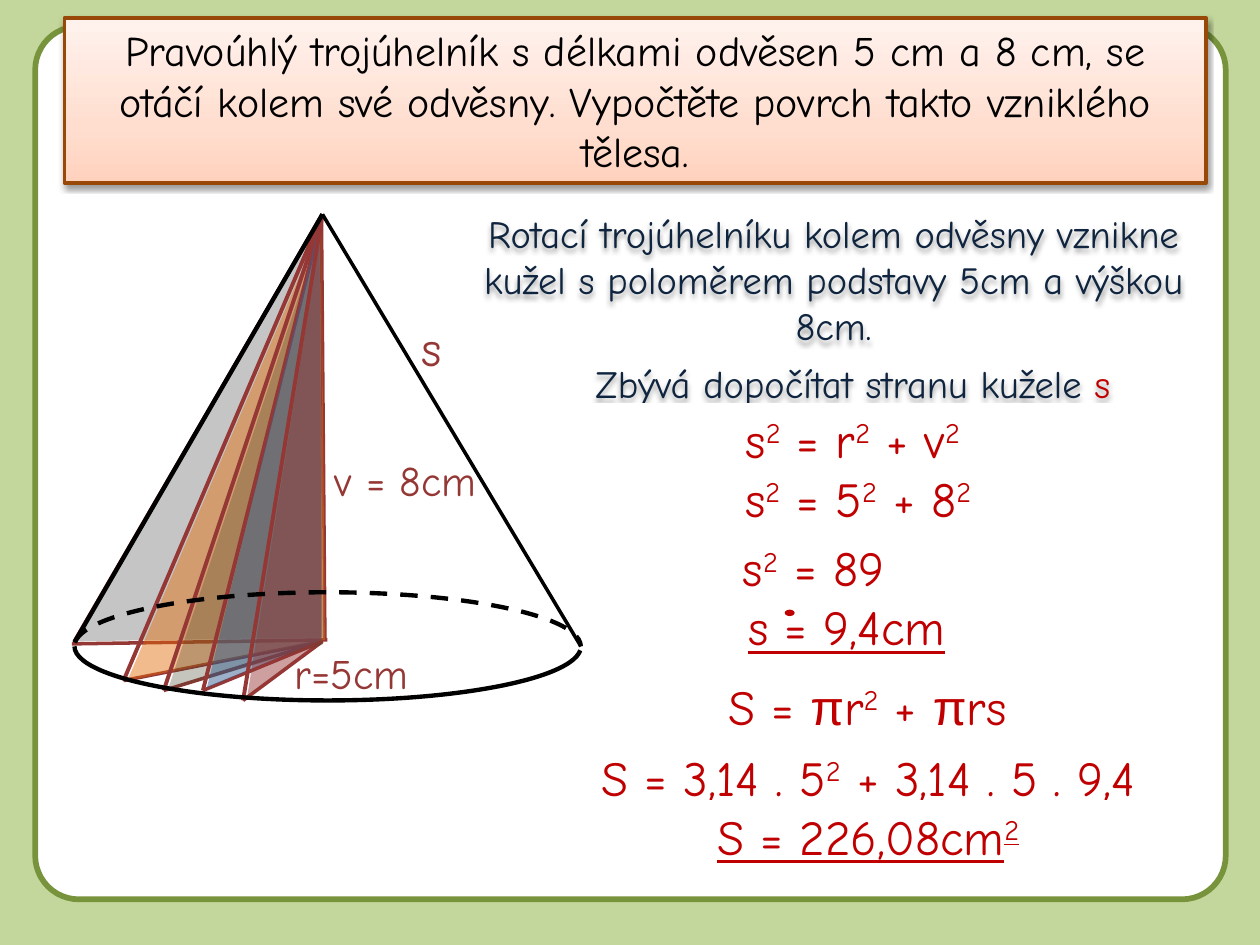
import itertools

import pptx
import pptx.dml.color
import pptx.enum.dml
import pptx.enum.shapes
import pptx.enum.text
import pptx.oxml
import pptx.oxml.ns
import pptx.util

Cm = pptx.util.Cm
Pt = pptx.util.Pt
RGB = pptx.dml.color.RGBColor.from_string
SHAPE = pptx.enum.shapes.MSO_SHAPE
ALIGN = pptx.enum.text.PP_ALIGN

THEME = {
    "font": "Comic Neue", "symbols": "Arial",
    "page": "C3D69B", "panel": "FFFFFF", "frame": "77933C",
    "ink": "000000", "note": "0F243E", "result": "C00000", "triangle": "953735",
    "title_line": "984807",
    "title_stops": [(0, "FFD2BD"), (35, "FFDED0"), (100, "FFF2ED")],
    "title_size": 24, "note_size": 22, "label_size": 24, "formula_size": 28,
}

PROBLEM = ("Pravoúhlý trojúhelník s délkami odvěsen 5 cm a 8 cm, se otáčí kolem "
           "své odvěsny. Vypočtěte povrch takto vzniklého tělesa.")
PROBLEM_BOX = (1.3, 0.36, 23.01, 3.33)
PANEL_BOX = (0.71, 0.53, 24, 17.6)

NOTES = [
    ("Rotací trojúhelníku kolem odvěsny vznikne kužel s poloměrem podstavy 5cm "
     "a výškou 8cm.", "", (9.3, 4.11, 15.01, 3.07)),
    ("Zbývá dopočítat stranu kužele ", "s", (10.49, 7.14, 13.41, 1.19)),
]

FORMULA_HEIGHT = 1.45
FORMULAS = [
    ("s^2 = r^2 + v^2", 10.69, 8.13, 13, False),
    ("s^2 = 5^2 + 8^2", 12.5, 9.32, 9.6, False),
    ("s^2 = 89", 12.5, 10.72, 7.8, False),
    ("s = 9,4cm", 12.27, 11.91, 9.6, True),
    ("S = πr^2 + πrs", 12.29, 13.51, 10.39, False),
    ("S = 3,14 . 5^2 + 3,14 . 5 . 9,4", 10.9, 14.94, 13.21, False),
    ("S = 226,08cm^2", 10.9, 16.13, 13.21, True),
]
ROUNDING_DOT = (15.82, 12.29, 0.2, 0.13)

LABELS = [
    ("v = 8cm", (6.5, 9.04, 3.99, 1.27), "label_size", ALIGN.LEFT),
    ("r=5cm", (5.69, 12.93, 4.6, 1.27), "label_size", ALIGN.LEFT),
    ("s", (8.1, 6.27, 1.19, 1.45), "formula_size", ALIGN.CENTER),
]

APEX, CENTRE = (6.5, 4.32), (6.5, 12.93)
LEGS = [((6.48, 4.32), (6.55, 12.9)), ((1.45, 12.98), (6.6, 12.9))]
POSITIONS = [
    ((1.5, 12.93), [(6.43, 4.39), (1.55, 12.93), (6.53, 12.85)], "808080", 45),
    ((2.49, 13.72), [(6.48, 4.52), (2.57, 13.72), (6.55, 12.9)], "E46C0A", 46),
    ((3.3, 13.92), [(6.48, 4.6), (3.38, 13.92), (6.5, 13)], "4A452A", 31),
    ((4.09, 13.92), [(6.45, 4.47), (4.17, 13.87), (6.48, 12.9)], "376092", 49),
    ((4.9, 14.12), [(6.5, 4.52), (4.98, 14.07), (6.48, 12.9)], "953735", 47),
]
BASE_BOX = (1.5, 11.94, 10.21, 2.18)
BASE_ARCS = [(0, pptx.enum.dml.MSO_LINE.DASH), (180, None)]
CONE_SIDES = [((11.71, 13.03), 2), ((1.5, 12.95), 2.5)]


def cm(values):
    return [Cm(value) for value in values]


def xml(tag, attributes="", inner=""):
    return (f'<a:{tag} {pptx.oxml.ns.nsdecls("a")} {attributes}>'
            f'{inner}</a:{tag}>')


def add_shadow(shape):
    color = xml("srgbClr", 'val="000000"', xml("alpha", 'val="38000"'))
    shadow = xml("outerShdw", 'blurRad="40000" dist="20000" dir="5400000" '
                 'rotWithShape="0"', color)
    shape.element.spPr.append(pptx.oxml.parse_xml(xml("effectLst", "", shadow)))


def split_runs(text):
    for index, chunk in enumerate(text.split("^")):
        if index:
            yield chunk[0], "power"
            chunk = chunk[1:]
        for symbol, letters in itertools.groupby(chunk, lambda letter: letter == "π"):
            yield "".join(letters), "symbol" if symbol else "plain"


def write(shape, text, *, size, color, align=ALIGN.CENTER, underline=None,
          accent="", anchor=pptx.enum.text.MSO_ANCHOR.TOP):
    frame = shape.text_frame
    frame.word_wrap = True
    frame.auto_size = pptx.enum.text.MSO_AUTO_SIZE.SHAPE_TO_FIT_TEXT
    frame.vertical_anchor = anchor
    paragraph = frame.paragraphs[0]
    paragraph.alignment = align
    runs = [(part, kind, color) for part, kind in split_runs(text)]
    if accent:
        runs.append((accent, "plain", "result"))
    for part, kind, tint in runs:
        run = paragraph.add_run()
        run.text = part
        run.font.name = THEME["symbols" if kind == "symbol" else "font"]
        run.font.size = Pt(THEME[size])
        run.font.color.rgb = RGB(THEME[tint])
        run.font.underline = underline
        if kind == "power":
            run.font._element.set("baseline", "30000")


def add_filled(shapes, kind, box, fill):
    shape = shapes.add_shape(kind, *cm(box))
    shape.shadow.inherit = False
    shape.fill.solid()
    shape.fill.fore_color.rgb = RGB(fill)
    shape.line.fill.background()
    return shape


def add_line(shapes, start, end, color, width):
    line = shapes.add_connector(pptx.enum.shapes.MSO_CONNECTOR.STRAIGHT,
                                *cm(start + end))
    line.line.color.rgb = RGB(THEME[color])
    line.line.width = Pt(width)
    line.element.spPr.append(pptx.oxml.parse_xml(xml("effectLst")))


def add_face(shapes, corners, color, opacity):
    builder = shapes.build_freeform(*cm(corners[0]))
    builder.add_line_segments([cm(corner) for corner in corners[1:]], close=True)
    face = builder.convert_to_shape()
    face.shadow.inherit = False
    face.fill.solid()
    face.fill.fore_color.rgb = RGB(color)
    face.line.fill.background()
    tint = face.element.spPr.find(".//" + pptx.oxml.ns.qn("a:srgbClr"))
    tint.append(pptx.oxml.parse_xml(xml("alpha", f'val="{opacity * 1000}"')))


def add_problem(title):
    title.left, title.top, title.width, title.height = cm(PROBLEM_BOX)
    stops = "".join(xml("gs", f'pos="{position * 1000}"',
                        xml("srgbClr", f'val="{color}"'))
                    for position, color in THEME["title_stops"])
    gradient = xml("gsLst", "", stops) + xml("lin", 'ang="16200000" scaled="1"')
    properties = title.element.spPr
    properties.append(pptx.oxml.parse_xml(xml("prstGeom", 'prst="rect"', xml("avLst"))))
    properties.append(pptx.oxml.parse_xml(xml("gradFill", 'rotWithShape="1"', gradient)))
    title.line.color.rgb = RGB(THEME["title_line"])
    title.line.width = Pt(2)
    add_shadow(title)
    write(title, PROBLEM, size="title_size", color="ink",
          anchor=pptx.enum.text.MSO_ANCHOR.MIDDLE)


def add_cone(shapes):
    for start, end in LEGS:
        add_line(shapes, start, end, "triangle", 2)
    for rim, *_ in POSITIONS[1:]:
        add_line(shapes, rim, CENTRE, "triangle", 2)
    for text, box, size, align in LABELS:
        write(shapes.add_textbox(*cm(box)), text, size=size, color="triangle", align=align)
    for rim, corners, color, opacity in POSITIONS:
        add_line(shapes, rim, APEX, "triangle", 2.25)
        add_face(shapes, corners, color, opacity)
    outline = shapes.add_group_shape().shapes
    for rotation, dash in BASE_ARCS:
        arc = outline.add_shape(SHAPE.ARC, *cm(BASE_BOX))
        arc.adjustments[0], arc.adjustments[1] = 108.54, 0
        arc.rotation = rotation
        arc.shadow.inherit = False
        arc.fill.background()
        arc.line.color.rgb = RGB(THEME["ink"])
        arc.line.width = Pt(2.5)
        arc.line.dash_style = dash
    for rim, width in CONE_SIDES:
        add_line(outline, rim, APEX, "ink", width)


def main():
    deck = pptx.Presentation()
    deck.slide_width, deck.slide_height = Cm(25.4), Cm(19.05)
    slide = deck.slides.add_slide(deck.slide_layouts[5])
    shapes = slide.shapes
    slide.background.fill.solid()
    slide.background.fill.fore_color.rgb = RGB(THEME["page"])

    panel = add_filled(shapes, SHAPE.ROUNDED_RECTANGLE, PANEL_BOX, THEME["panel"])
    panel.adjustments[0] = 0.05
    panel.line.color.rgb = RGB(THEME["frame"])
    panel.line.width = Pt(3.25)
    panel.element.addnext(shapes.title.element)
    add_problem(shapes.title)
    add_cone(shapes)
    for text, accent, box in NOTES:
        note = shapes.add_textbox(*cm(box))
        add_shadow(note)
        write(note, text, size="note_size", color="note", accent=accent)
    for text, left, top, width, underline in FORMULAS:
        row = add_filled(shapes, SHAPE.RECTANGLE, (left, top, width, FORMULA_HEIGHT),
                         THEME["panel"])
        write(row, text, size="formula_size", color="result", underline=underline)
    add_filled(shapes, SHAPE.OVAL, ROUNDING_DOT, THEME["result"])
    deck.save("out.pptx")


if __name__ == "__main__":
    main()
